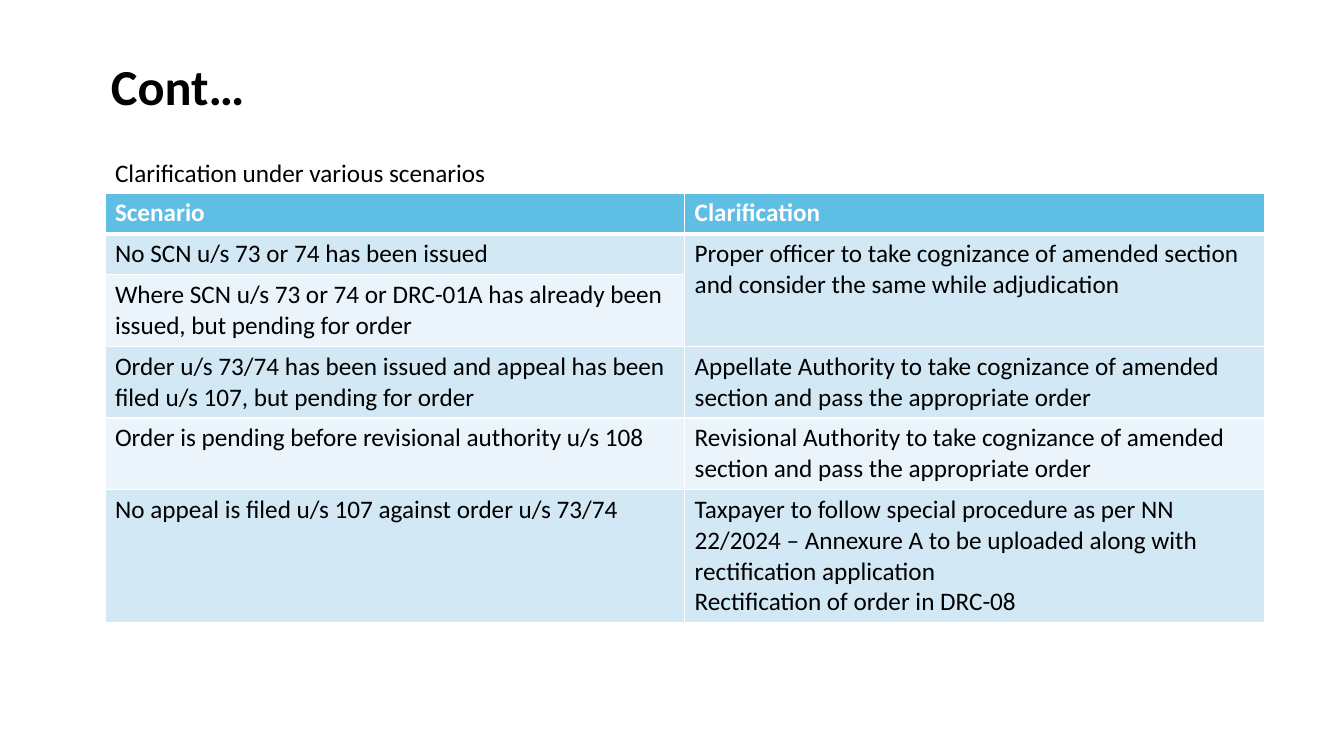
from typing import NamedTuple

from lxml.etree import SubElement
from pptx import Presentation
from pptx.dml.color import RGBColor
from pptx.enum.text import MSO_ANCHOR, MSO_AUTO_SIZE, PP_ALIGN
from pptx.oxml.ns import qn
from pptx.util import Pt

FONT = "Calibri"
BLACK, WHITE = "000000", "FFFFFF"
HEADER, DARK_BAND, LIGHT_BAND = "5EBEE4", "D2E8F5", "EAF4FA"


class Box(NamedTuple):
    left: float
    top: float
    width: float
    height: float


class Row(NamedTuple):
    height: float
    scenario: str
    clarification: str


ROWS = [
    Row(29.2, "Scenario", "Clarification"),
    Row(29.2, "No SCN u/s 73 or 74 has been issued",
        "Proper officer to take cognizance of amended section and consider "
        "the same while adjudication"),
    Row(50.4, "Where SCN u/s 73 or 74 or DRC-01A has already been issued, "
        "but pending for order", ""),
    Row(50.4, "Order u/s 73/74 has been issued and appeal has been filed "
        "u/s 107, but pending for order",
        "Appellate Authority to take cognizance of amended section and pass "
        "the appropriate order"),
    Row(50.4, "Order is pending before revisional authority u/s 108",
        "Revisional Authority to take cognizance of amended section and pass "
        "the appropriate order"),
    Row(93.6, "No appeal is filed u/s 107 against order u/s 73/74",
        "Taxpayer to follow special procedure as per NN 22/2024 – Annexure A "
        "to be uploaded along with rectification application\n"
        "Rectification of order in DRC-08"),
]


def rgb(color: str) -> RGBColor:
    return RGBColor.from_string(color)


def write(tf, text: str, *, size: float = 18, color: str = BLACK,
          bold: bool = False, align=PP_ALIGN.LEFT, spacing: float = 1) -> None:
    tf.text = text
    for p in tf.paragraphs:
        p.alignment, p.line_spacing = align, spacing
        p.space_before = Pt(0)
        for r in p.runs:
            r.font.name, r.font.size, r.font.bold = FONT, Pt(size), bold
            r.font.color.rgb = rgb(color)


def place(sp, box: Box, text: str, **fmt) -> None:
    sp.left, sp.top, sp.width, sp.height = map(Pt, box)
    tf = sp.text_frame
    tf.word_wrap = True
    tf.auto_size = MSO_AUTO_SIZE.NONE
    tf.vertical_anchor = MSO_ANCHOR.TOP
    write(tf, text, **fmt)


def set_borders(cell, **widths: float) -> None:
    tc_pr = cell._tc.get_or_add_tcPr()
    for side, width in widths.items():
        ln = SubElement(tc_pr, qn(f"a:ln{side}"), w=str(Pt(width)))
        fill = SubElement(ln, qn("a:solidFill"))
        SubElement(fill, qn("a:srgbClr"), val=WHITE)


def add_scenario_table(s, box: Box) -> None:
    table = s.shapes.add_table(len(ROWS), 2, *map(Pt, box)).table
    for column in table.columns:
        column.width = Pt(box.width / 2)
    for i, row in enumerate(ROWS):
        table.rows[i].height = Pt(row.height)
        is_header = i == 0
        band = HEADER if is_header else DARK_BAND if i % 2 else LIGHT_BAND
        for j, text in enumerate((row.scenario, row.clarification)):
            cell = table.cell(i, j)
            write(cell.text_frame, text, bold=is_header,
                  color=WHITE if is_header else BLACK)
            set_borders(cell, L=1, R=1, T=3 if i == 1 else 1,
                        B=3 if is_header else 1)
            cell.fill.solid()
            cell.fill.fore_color.rgb = rgb(band)
    # One clarification covers the first two scenarios
    table.cell(1, 1).merge(table.cell(2, 1))


def main() -> None:
    prs = Presentation()
    prs.slide_width, prs.slide_height = Pt(960), Pt(540)
    s = prs.slides.add_slide(prs.slide_layouts[1])

    # Title
    place(s.shapes.title, Box(72, 36, 866, 51), "Cont…", size=36, bold=True)

    # Lead-in line, without a bullet
    body = s.placeholders[1]
    place(body, Box(75, 87, 828, 88), "Clarification under various scenarios",
          align=PP_ALIGN.JUSTIFY, spacing=2)
    p_pr = body.text_frame.paragraphs[0]._p.get_or_add_pPr()
    p_pr.set("marL", "0")
    p_pr.set("indent", "0")
    SubElement(p_pr, qn("a:buNone"))

    # Scenarios and clarifications
    add_scenario_table(s, Box(75, 137.8, 828, sum(r.height for r in ROWS)))

    prs.save("out.pptx")


if __name__ == "__main__":
    main()
